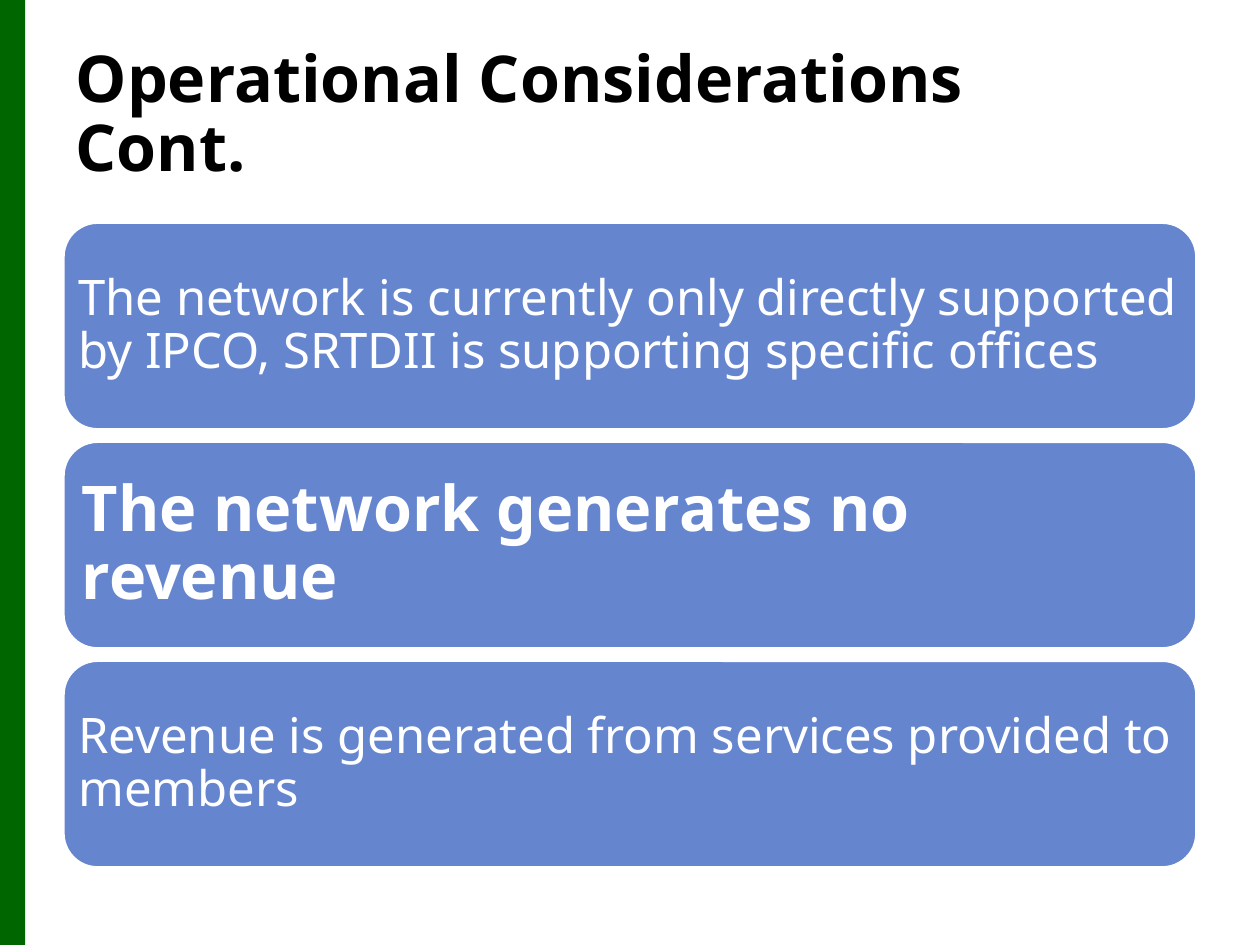
import pptx
import pptx.util
import pptx.dml.color
import pptx.enum.shapes
import pptx.enum.text

Pt = pptx.util.Pt
GREEN = pptx.dml.color.RGBColor(0x00, 0x66, 0x00)
BLUE = pptx.dml.color.RGBColor(0x65, 0x85, 0xCF)
WHITE = pptx.dml.color.RGBColor(0xFF, 0xFF, 0xFF)
BLACK = pptx.dml.color.RGBColor(0x00, 0x00, 0x00)
FONT = "Noto Sans"
CARDS = [
    ("The network is currently only directly supported by IPCO, "
     "SRTDII is supporting specific offices", 28, False, 3),
    ("The network generates no revenue", 36, True, 5),
    ("Revenue is generated from services provided to members", 28, False, 3),
]


def style_text(frame, size, bold, color, spacing):
    """Left-align and format every run of a vertically centred text frame."""
    frame.word_wrap = True
    frame.vertical_anchor = pptx.enum.text.MSO_ANCHOR.MIDDLE
    for para in frame.paragraphs:
        para.alignment = pptx.enum.text.PP_ALIGN.LEFT
        para.line_spacing = spacing
        for span in para.runs:
            span.font.name = FONT
            span.font.size = Pt(size)
            span.font.bold = bold
            span.font.color.rgb = color


def add_side_bar(page, left, top, width, height):
    """Draw the green bar along the page edge."""
    bar = page.shapes.add_shape(
        pptx.enum.shapes.MSO_SHAPE.RECTANGLE, Pt(left), Pt(top), Pt(width), Pt(height))
    bar.shadow.inherit = False
    bar.fill.solid()
    bar.fill.fore_color.rgb = GREEN
    bar.line.fill.background()


def set_title(page, left, top, width, height):
    """Place and format the title placeholder."""
    title = page.shapes.title
    title.left, title.top = Pt(left), Pt(top)
    title.width, title.height = Pt(width), Pt(height)
    title.text_frame.text = "Operational Considerations\vCont."
    style_text(title.text_frame, 36.9, True, BLACK, 0.89)


def add_card(page, left, top, width, height, text, size, bold, inset):
    """Draw one rounded card with its statement."""
    card = page.shapes.add_shape(
        pptx.enum.shapes.MSO_SHAPE.ROUNDED_RECTANGLE,
        Pt(left), Pt(top), Pt(width), Pt(height))
    card.shadow.inherit = False
    card.fill.solid()
    card.fill.fore_color.rgb = BLUE
    card.line.color.rgb = WHITE
    card.line.width = Pt(2)
    frame = card.text_frame
    frame.margin_left = frame.margin_right = Pt(inset)
    frame.margin_top = frame.margin_bottom = Pt(inset)
    frame.text = text
    style_text(frame, size, bold, WHITE, 0.9)


def add_card_stack(page, left, top, width, height, gap):
    """Stack the cards evenly in the given box."""
    card_height = (height - gap * (len(CARDS) - 1)) / len(CARDS)
    for index, card in enumerate(CARDS):
        card_top = top + index * (card_height + gap)
        add_card(page, left, card_top, width, card_height, *card)


def main():
    """Build and save the deck."""
    deck = pptx.Presentation()
    deck.slide_width, deck.slide_height = Pt(720), Pt(540)
    page = deck.slides.add_slide(deck.slide_layouts.get_by_name("Title Only"))
    add_side_bar(page, 0, 0, 14.4, 540)
    set_title(page, 36, 21.6, 648, 90)
    add_card_stack(page, 36, 127, 648, 369, 6.5)
    deck.save("out.pptx")


if __name__ == "__main__":
    main()
